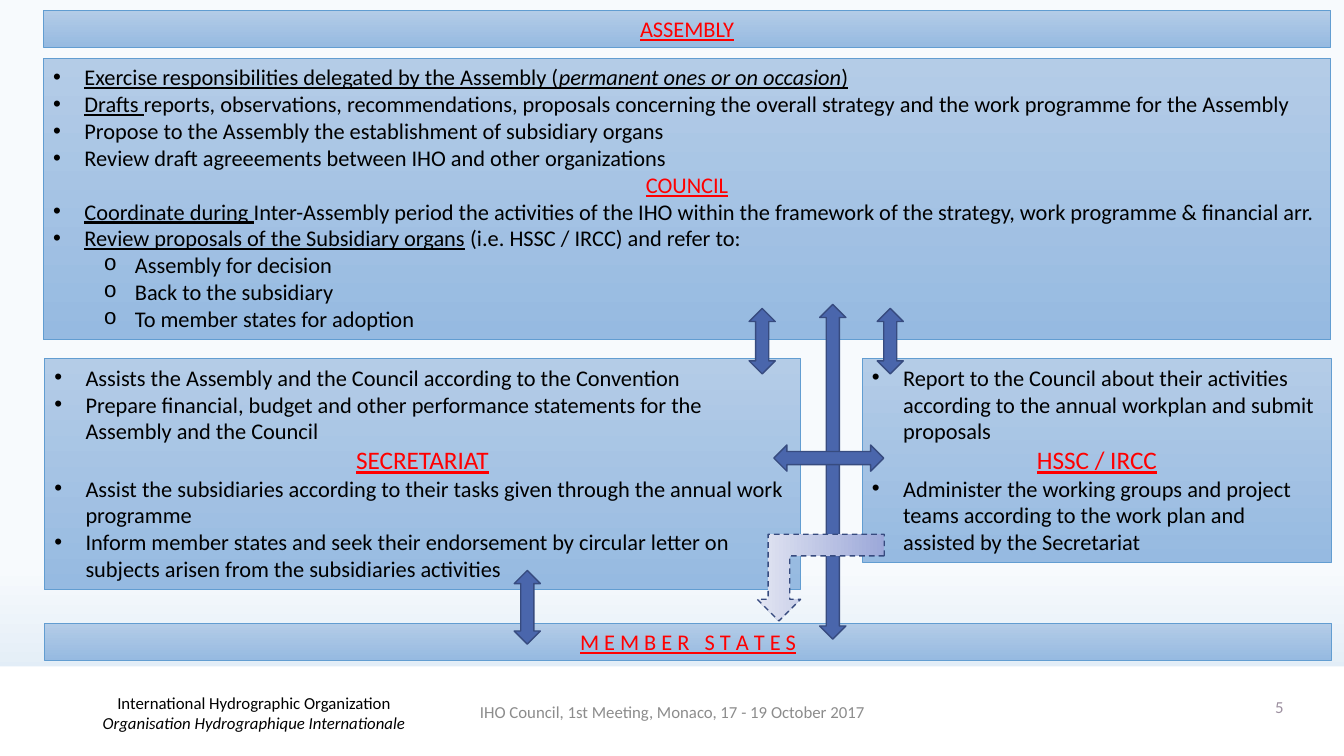
from dataclasses import dataclass
from typing import NamedTuple, Optional

from lxml.etree import SubElement
from pptx import Presentation
from pptx.dml.color import RGBColor
from pptx.dml.fill import FillFormat
from pptx.enum.dml import MSO_LINE
from pptx.enum.shapes import MSO_SHAPE
from pptx.enum.text import MSO_ANCHOR, MSO_AUTO_SIZE, PP_ALIGN
from pptx.oxml.ns import qn
from pptx.shapes.autoshape import Shape
from pptx.slide import Slide
from pptx.text.text import TextFrame, _Paragraph
from pptx.util import Emu, Pt

PX = 9144  # EMU per px, 100 px to the inch


@dataclass(frozen=True)
class Theme:
    font: str = "Calibri"
    body: int = 16
    large: int = 18
    small: int = 12
    text: str = "000000"
    heading: str = "FF0000"
    footer: str = "8C8C8C"
    number: str = "9D90A0"
    band: str = "FFFFFF"
    background: tuple[str, str] = ("F7FAFD", "D0E2F1")
    panel: tuple[str, str] = ("B4CCE7", "96BAE1")
    panel_line: str = "629DD1"
    arrow: str = "4A66AC"
    arrow_line: str = "374B7F"
    bent_arrow: tuple[str, str] = ("9CA8D9", "E2E5F2")


THEME = Theme()


class Box(NamedTuple):
    left: int
    top: int
    width: int
    height: int

    def emu(self) -> list[Emu]:
        return [Emu(v * PX) for v in self]


class Bullet(NamedTuple):
    char: str
    font: str
    level: int
    margin: int


class Span(NamedTuple):
    text: str
    underline: bool = False
    italic: bool = False


@dataclass(frozen=True)
class Para:
    spans: tuple[Span, ...]
    size: int = THEME.body
    color: str = THEME.text
    align: PP_ALIGN = PP_ALIGN.LEFT
    bullet: Optional[Bullet] = None


class Panel(NamedTuple):
    box: Box
    paras: list[Para]


class Arrow(NamedTuple):
    box: Box
    rotation: int = 0


HANGING = 31
DOT = Bullet("•", "Arial", 0, HANGING)
CIRCLE = Bullet("o", "Courier New", 1, 81)


def item(*spans: Span, bullet: Bullet = DOT) -> Para:
    return Para(spans, bullet=bullet)


def heading(text: str, size: int = THEME.body) -> Para:
    return Para((Span(text, underline=True),), size, THEME.heading, PP_ALIGN.CENTER)


PANELS = [
    Panel(Box(44, 618, 1277, 37), [heading("M E M B E R   S T A T E S")]),
    Panel(Box(855, 356, 466, 202), [
        item(Span("Report to the Council about their activities according to the annual "
                  "workplan and submit proposals")),
        heading("HSSC / IRCC", THEME.large),
        item(Span("Administer the working groups and project teams according to the "
                  "work plan and assisted by the Secretariat")),
    ]),
    Panel(Box(44, 356, 750, 229), [
        item(Span("Assists the Assembly and the Council according to the Convention")),
        item(Span("Prepare financial, budget and other performance statements for the "
                  "Assembly and the Council")),
        heading("SECRETARIAT", THEME.large),
        item(Span("Assist the subsidiaries according to their tasks given through the "
                  "annual work programme")),
        item(Span("Inform member states and seek their endorsement by circular letter on "
                  "subjects arisen from the subsidiaries activities")),
    ]),
    Panel(Box(43, 10, 1277, 37), [heading("ASSEMBLY")]),
    Panel(Box(43, 58, 1277, 279), [
        item(Span("Exercise responsibilities delegated by the Assembly (", True),
             Span("permanent ones or on occasion", True, True), Span(")", True)),
        item(Span("Drafts ", True),
             Span("reports, observations, recommendations, proposals concerning the overall "
                  "strategy and the work programme for the Assembly")),
        item(Span("Propose to the Assembly the establishment of subsidiary organs")),
        item(Span("Review draft agreeements between IHO and other organizations")),
        heading("COUNCIL"),
        item(Span("Coordinate during ", True),
             Span("Inter-Assembly period the activities of the IHO within the framework of "
                  "the strategy, work programme & financial arr.")),
        item(Span("Review proposals of the Subsidiary organs", True),
             Span(" (i.e. HSSC / IRCC) and refer to:")),
        *(item(Span(target), bullet=CIRCLE) for target in (
            "Assembly for decision", "Back to the subsidiary", "To member states for adoption")),
    ]),
]

ARROWS = [
    Arrow(Box(743, 306, 26, 65)),
    Arrow(Box(870, 306, 26, 65)),
    Arrow(Box(510, 566, 26, 73)),
    Arrow(Box(813, 302, 26, 332)),
]
BENT_ARROW = Arrow(Box(751, 530, 126, 86), 180)
CROSS_ARROW = Arrow(Box(809, 400, 26, 109), 90)

ORGANIZATION = Para((Span("International Hydrographic Organization"), Span("\n"),
                     Span("Organisation Hydrographique Internationale", italic=True)),
                    THEME.small, align=PP_ALIGN.CENTER)
MEETING = Para((Span("IHO Council, 1st Meeting, Monaco, 17 - 19 October 2017"),),
               THEME.small, THEME.footer, PP_ALIGN.CENTER)
NUMBER = Para((Span("5"),), THEME.small, THEME.number, PP_ALIGN.RIGHT)


def set_gradient(fill: FillFormat, colors: tuple[str, str], angle: int, start: float = 0) -> None:
    fill.gradient()
    fill.gradient_angle = angle
    for stop, color, position in zip(fill.gradient_stops, colors, (start, 1)):
        stop.color.rgb = RGBColor.from_string(color)
        stop.position = position


def set_bullet(p: _Paragraph, bullet: Bullet) -> None:
    p.level = bullet.level
    pPr = p._p.get_or_add_pPr()
    pPr.set("marL", str(bullet.margin * PX))
    pPr.set("indent", str(-HANGING * PX))
    SubElement(pPr, qn("a:buFont"), typeface=bullet.font)
    SubElement(pPr, qn("a:buChar"), char=bullet.char)


def write(tf: TextFrame, paras: list[Para]) -> None:
    tf.word_wrap = True
    for i, para in enumerate(paras):
        p = tf.add_paragraph() if i else tf.paragraphs[0]
        p.alignment = para.align
        if para.bullet:
            set_bullet(p, para.bullet)
        for span in para.spans:
            if span.text == "\n":
                p.add_line_break()
                continue
            r = p.add_run()
            r.text = span.text
            r.font.name, r.font.size = THEME.font, Pt(para.size)
            r.font.underline, r.font.italic = span.underline, span.italic
            r.font.color.rgb = RGBColor.from_string(para.color)


def add_shape(s: Slide, kind: MSO_SHAPE, box: Box, line: Optional[str] = None,
              width: float = 1, fill: Optional[str] = None) -> Shape:
    sp = s.shapes.add_shape(kind, *box.emu())
    sp.shadow.inherit = False
    if fill:
        sp.fill.solid()
        sp.fill.fore_color.rgb = RGBColor.from_string(fill)
    if line:
        sp.line.color.rgb = RGBColor.from_string(line)
        sp.line.width = Pt(width)
    else:
        sp.line.fill.background()
    return sp


def add_panel(s: Slide, panel: Panel) -> None:
    sp = add_shape(s, MSO_SHAPE.RECTANGLE, panel.box, THEME.panel_line, 0.5)
    set_gradient(sp.fill, THEME.panel, 270)
    tf = sp.text_frame
    tf.vertical_anchor = MSO_ANCHOR.TOP
    tf.auto_size = MSO_AUTO_SIZE.SHAPE_TO_FIT_TEXT
    write(tf, panel.paras)


def add_double_arrow(s: Slide, arrow: Arrow) -> None:
    sp = add_shape(s, MSO_SHAPE.UP_DOWN_ARROW, arrow.box, THEME.arrow_line, fill=THEME.arrow)
    sp.rotation = arrow.rotation


def add_bent_arrow(s: Slide, arrow: Arrow) -> None:
    sp = add_shape(s, MSO_SHAPE.BENT_UP_ARROW, arrow.box, THEME.arrow_line)
    set_gradient(sp.fill, THEME.bent_arrow, 0)
    sp.line.dash_style = MSO_LINE.DASH
    sp.rotation = arrow.rotation


def add_caption(s: Slide, box: Box, para: Para, anchor: MSO_ANCHOR = MSO_ANCHOR.MIDDLE) -> None:
    tf = s.shapes.add_textbox(*box.emu()).text_frame
    tf.vertical_anchor = anchor
    write(tf, [para])


def main() -> None:
    prs = Presentation()
    prs.slide_width, prs.slide_height = Emu(1333 * PX), Emu(750 * PX)
    s = prs.slides.add_slide(prs.slide_layouts[6])
    set_gradient(s.background.fill, THEME.background, 270, start=0.75)
    add_shape(s, MSO_SHAPE.RECTANGLE, Box(0, 661, 1333, 89), fill=THEME.band)
    add_caption(s, Box(27, 687, 450, 40), ORGANIZATION)
    for panel in PANELS:
        add_panel(s, panel)
    for arrow in ARROWS:
        add_double_arrow(s, arrow)
    add_bent_arrow(s, BENT_ARROW)
    add_double_arrow(s, CROSS_ARROW)
    add_caption(s, Box(442, 686, 450, 40), MEETING)
    add_caption(s, Box(983, 686, 300, 40), NUMBER, MSO_ANCHOR.TOP)
    prs.save("out.pptx")


if __name__ == "__main__":
    main()
